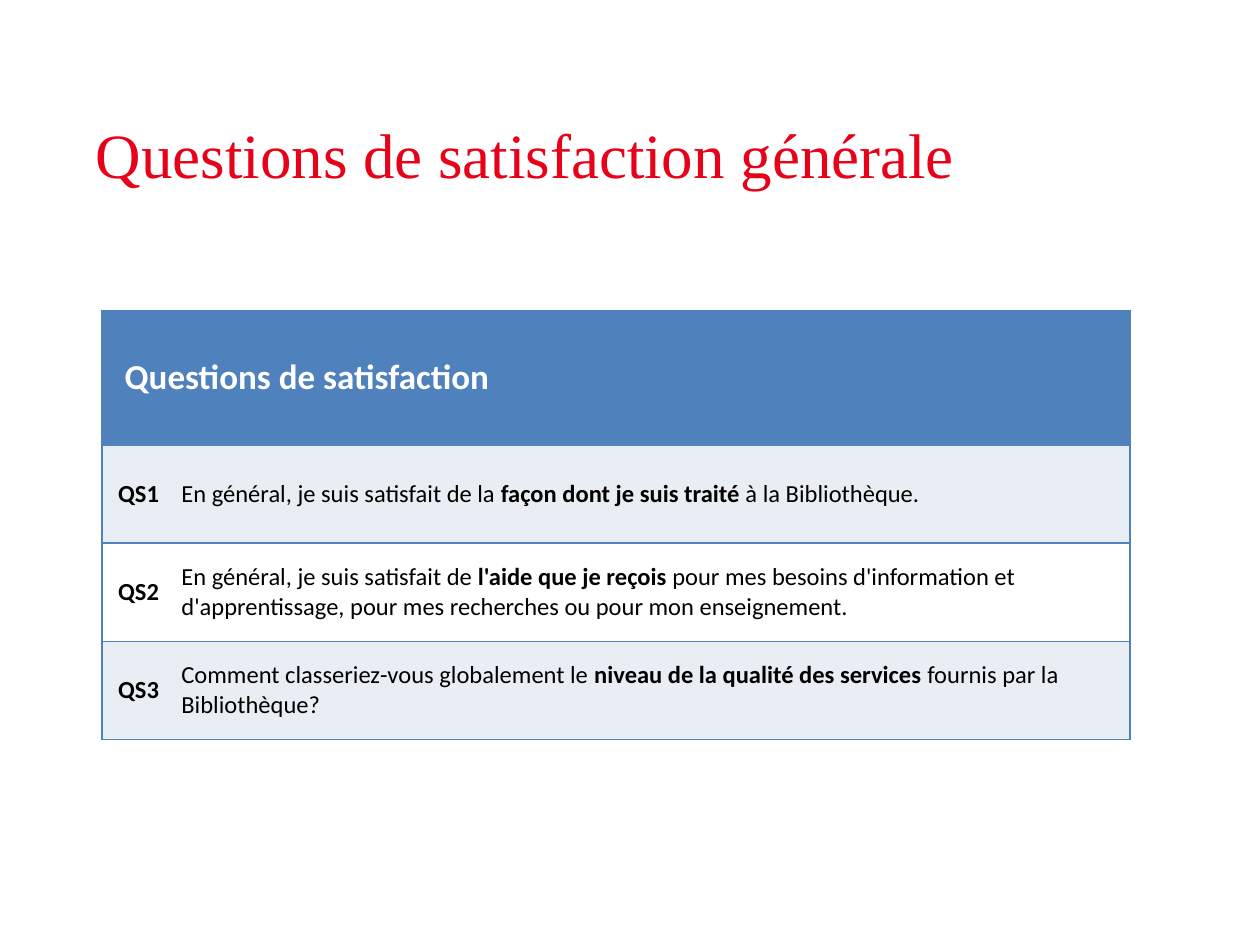
from lxml import etree
from pptx import Presentation
from pptx.dml.color import RGBColor
from pptx.enum.text import MSO_ANCHOR, PP_ALIGN
from pptx.oxml.ns import qn
from pptx.util import Inches, Pt

TOP, MIDDLE = MSO_ANCHOR.TOP, MSO_ANCHOR.MIDDLE
LEFT, CENTER = PP_ALIGN.LEFT, PP_ALIGN.CENTER

RED = RGBColor(0xE7, 0x02, 0x1A)
BLUE = RGBColor(0x4F, 0x81, 0xBD)
PALE = RGBColor(0xE9, 0xED, 0xF4)
WHITE = RGBColor(0xFF, 0xFF, 0xFF)
BLACK = RGBColor(0x00, 0x00, 0x00)

TITLE = "Questions de satisfaction générale"
HEADING = "Questions de satisfaction"
# Each question is split into plain, bold and plain text
QUESTIONS = [
    ("En général, je suis satisfait de la ", "façon dont je suis traité",
     " à la Bibliothèque."),
    ("En général, je suis satisfait de ", "l'aide que je reçois ",
     "pour mes besoins d'information et d'apprentissage, "
     "pour mes recherches ou pour mon enseignement."),
    ("Comment classeriez-vous globalement le ",
     "niveau de la qualité des services ", "fournis par la Bibliothèque?"),
]
COLUMN_WIDTHS = [0.58, 7.58]
ROW_HEIGHTS = [1.06] + [0.78] * len(QUESTIONS)


def apply(target, values):
    for name, value in values.items():
        setattr(target, name, value)


class SlideBuilder:
    title_style = {"name": "Times New Roman", "size": Pt(36), "bold": False}
    heading_style = {"name": "Calibri", "size": Pt(20)}
    body_style = {"name": "Calibri", "size": Pt(14)}

    def __init__(self, deck):
        self.slide = deck.slides.add_slide(deck.slide_layouts[5])

    def add_text(self, paragraph, parts, style, color, align=LEFT):
        """Add (text, bold) parts to a paragraph."""
        paragraph.alignment = align
        for text, bold in parts:
            span = paragraph.add_run()
            span.text = text
            apply(span.font, {**style, "bold": bold})
            span.font.color.rgb = color

    def title(self, text, left, top, width, height):
        box = self.slide.shapes.title
        apply(box, {"left": Inches(left), "top": Inches(top),
                    "width": Inches(width), "height": Inches(height)})
        apply(box.text_frame, {"vertical_anchor": TOP, "word_wrap": True,
                               "margin_left": Inches(0.1),
                               "margin_top": Inches(0.1)})
        self.add_text(box.text_frame.paragraphs[0], [(text, False)],
                      self.title_style, RED)

    def table(self, left, top, widths, heights):
        table = self.slide.shapes.add_table(
            len(heights), len(widths), Inches(left), Inches(top),
            Inches(sum(widths)), Inches(sum(heights))).table
        apply(table, {"first_row": False, "horz_banding": False})
        for column, width in zip(table.columns, widths):
            column.width = Inches(width)
        for row, height in zip(table.rows, heights):
            row.height = Inches(height)
        return table

    def cell(self, cell, parts, style, color, fill, sides,
             align=LEFT, indent=0.05):
        apply(cell, {"vertical_anchor": MIDDLE,
                     "margin_left": Inches(indent),
                     "margin_right": Inches(0.05),
                     "margin_top": 0, "margin_bottom": 0})
        cell.fill.solid()
        cell.fill.fore_color.rgb = fill
        self.borders(cell, sides)
        self.add_text(cell.text_frame.paragraphs[0], parts, style, color,
                      align)

    def borders(self, cell, sides):
        """Draw the listed sides in blue and clear the others."""
        properties = cell._tc.get_or_add_tcPr()
        for index, side in enumerate("LRTB"):
            line = etree.Element(qn("a:ln" + side), w=str(Pt(1)))
            if side in sides:
                solid = etree.SubElement(line, qn("a:solidFill"))
                etree.SubElement(solid, qn("a:srgbClr"), val=str(BLUE))
            else:
                etree.SubElement(line, qn("a:noFill"))
            properties.insert(index, line)


def main():
    deck = Presentation()
    deck.slide_width, deck.slide_height = Inches(10), Inches(7.5)
    page = SlideBuilder(deck)

    # Title
    page.title(TITLE, 0.66, 0.82, 8.81, 0.94)

    # Table heading across both columns
    table = page.table(0.81, 2.47, COLUMN_WIDTHS, ROW_HEIGHTS)
    table.cell(0, 0).merge(table.cell(0, 1))
    page.cell(table.cell(0, 0), [(HEADING, True)], page.heading_style,
              WHITE, BLUE, "LRTB", indent=0.18)
    page.borders(table.cell(0, 1), "RTB")

    # One row per question
    for number, (before, key, after) in enumerate(QUESTIONS, 1):
        fill = PALE if number % 2 else WHITE
        page.cell(table.cell(number, 0), [(f"QS{number}", True)],
                  page.body_style, BLACK, fill, "LTB", CENTER)
        page.cell(table.cell(number, 1),
                  [(before, False), (key, True), (after, False)],
                  page.body_style, BLACK, fill, "RTB")

    deck.save("out.pptx")


if __name__ == "__main__":
    main()
